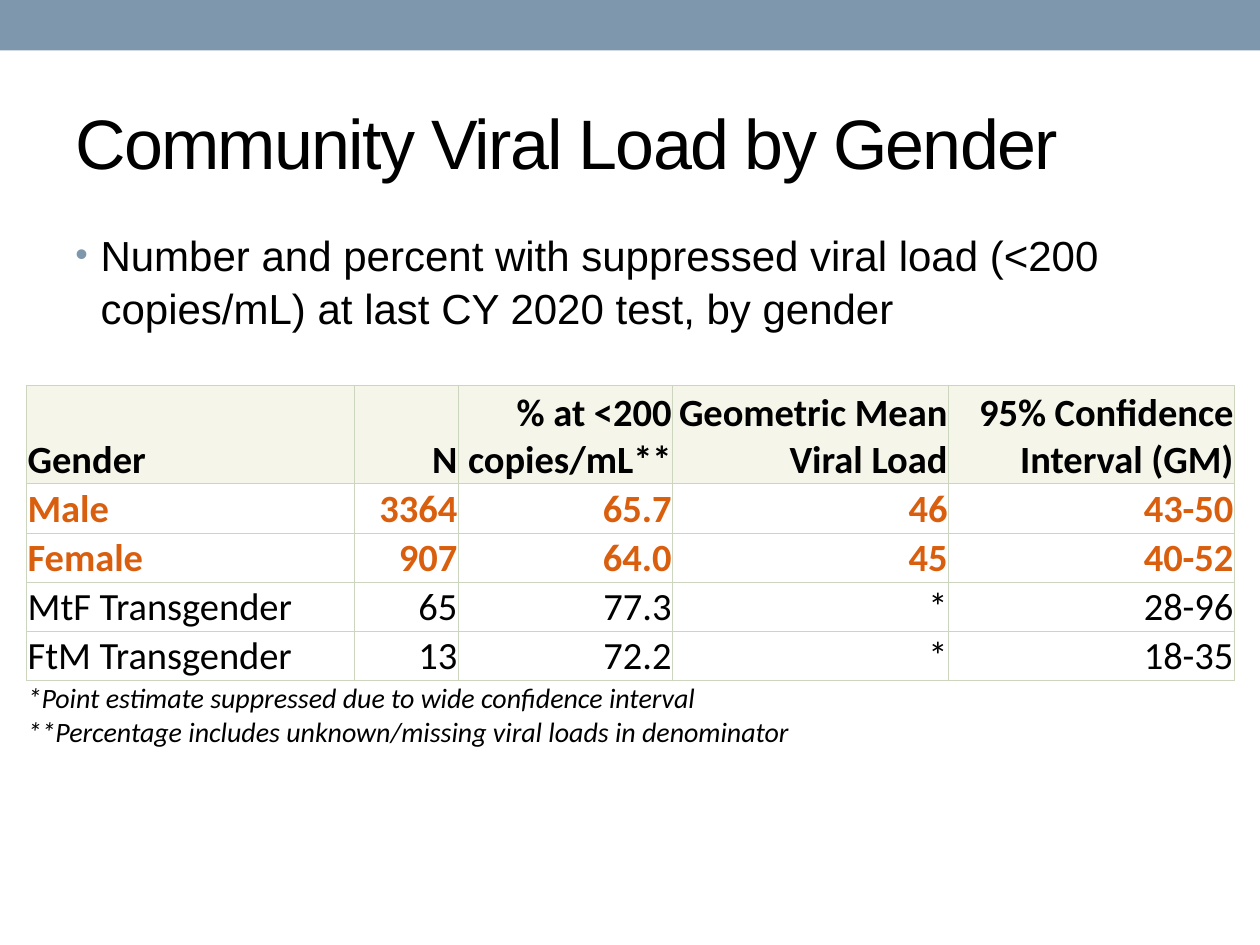
from lxml.etree import SubElement
from pptx import Presentation
from pptx.dml.color import RGBColor
from pptx.enum.shapes import MSO_SHAPE
from pptx.enum.text import MSO_ANCHOR, PP_ALIGN
from pptx.oxml.ns import qn
from pptx.util import Inches, Pt

COLORS = {
    "band": "7E97AD",
    "text": "000000",
    "highlight": "D95F0E",
    "header": "F6F5EA",
    "border": "CCD6BE",
}
COLUMNS = [2.6, 0.83, 1.7, 2.19, 2.27]
ROW_HEIGHT = 0.39
ROWS = [
    ["Gender", "N", "% at <200 copies/mL**", "Geometric Mean Viral Load",
     "95% Confidence Interval (GM)"],
    ["Male", "3364", "65.7", "46", "43-50"],
    ["Female", "907", "64.0", "45", "40-52"],
    ["MtF Transgender", "65", "77.3", "*", "28-96"],
    ["FtM Transgender", "13", "72.2", "*", "18-35"],
]
NOTES = [
    "*Point estimate suppressed due to wide confidence interval",
    "**Percentage includes unknown/missing viral loads in denominator",
]
CELL_FORMAT = {
    "vertical_anchor": MSO_ANCHOR.BOTTOM,
    "margin_left": Inches(0.01),
    "margin_top": Inches(0.01),
    "margin_right": Inches(0.01),
    "margin_bottom": 0,
}


def rgb(name):
    return RGBColor.from_string(COLORS[name])


def set_attrs(obj, **values):
    for name, value in values.items():
        setattr(obj, name, value)


def write(p, text, size, font, color="text", **style):
    r = p.add_run()
    r.text = text
    set_attrs(r.font, size=Pt(size), name=font, **style)
    r.font.color.rgb = rgb(color)
    return r


def add_band(s):
    sp = s.shapes.add_shape(MSO_SHAPE.RECTANGLE, 0, 0, Inches(10), Inches(0.4))
    sp.shadow.inherit = False
    sp.fill.solid()
    sp.fill.fore_color.rgb = rgb("band")
    sp.line.fill.background()


def add_text(s, box, text, size, anchor):
    sp = s.shapes.add_textbox(*map(Inches, box))
    tf = sp.text_frame
    set_attrs(tf, word_wrap=True, vertical_anchor=anchor)
    p = tf.paragraphs[0]
    return p, write(p, text, size, "Arial")


def add_bullet(p):
    set_attrs(p, space_before=Pt(3), space_after=Pt(3), line_spacing=1.05)
    pPr = p._p.get_or_add_pPr()
    pPr.set("marL", str(Inches(0.2)))
    pPr.set("indent", str(-Inches(0.2)))
    color = SubElement(pPr, qn("a:buClr"))
    SubElement(color, qn("a:srgbClr"), val=COLORS["band"])
    SubElement(pPr, qn("a:buSzPct"), val="85000")
    SubElement(pPr, qn("a:buFont"), typeface="Arial")
    SubElement(pPr, qn("a:buChar"), char="•")


def format_cell(cell, sides="LRTB", fill=None):
    set_attrs(cell, **CELL_FORMAT)
    tcPr = cell._tc.get_or_add_tcPr()
    for side in "LRTB":
        ln = SubElement(tcPr, qn(f"a:ln{side}"), w=str(Pt(0.5)))
        if side in sides:
            line = SubElement(ln, qn("a:solidFill"))
            SubElement(line, qn("a:srgbClr"), val=COLORS["border"])
        else:
            SubElement(ln, qn("a:noFill"))
    if fill:
        cell.fill.solid()
        cell.fill.fore_color.rgb = rgb(fill)
    else:
        cell.fill.background()


def add_gender_table(s):
    heights = [2 * ROW_HEIGHT] + [ROW_HEIGHT] * len(ROWS)
    frame = s.shapes.add_table(
        len(heights), len(COLUMNS), Inches(0.21), Inches(3.06),
        Inches(sum(COLUMNS)), Inches(sum(heights)))
    table = frame.table
    set_attrs(table, first_row=False, horz_banding=False)
    for column, width in zip(table.columns, COLUMNS):
        column.width = Inches(width)
    for row, height in zip(table.rows, heights):
        row.height = Inches(height)

    for i, values in enumerate(ROWS):
        for j, value in enumerate(values):
            cell = table.cell(i, j)
            format_cell(cell, fill="header" if i == 0 else None)
            p = cell.text_frame.paragraphs[0]
            p.alignment = PP_ALIGN.RIGHT if j else PP_ALIGN.LEFT
            color = "highlight" if i in (1, 2) else "text"
            write(p, value, 22, "Calibri", color, bold=i < 3)

    last = len(ROWS)
    for j in range(len(COLUMNS)):
        format_cell(table.cell(last, j), sides="T")
    notes = table.cell(last, 0)
    notes.merge(table.cell(last, len(COLUMNS) - 1))
    tf = notes.text_frame
    for k, note in enumerate(NOTES):
        p = tf.add_paragraph() if k else tf.paragraphs[0]
        write(p, note, 16, "Calibri", italic=True)


def main():
    prs = Presentation()
    set_attrs(prs, slide_width=Inches(10), slide_height=Inches(7.5))
    s = prs.slides.add_slide(prs.slide_layouts[6])
    add_band(s)
    p, r = add_text(s, (0.5, 0.58, 9, 1.08), "Community Viral Load by Gender",
                    40, MSO_ANCHOR.MIDDLE)
    r.font._element.set("spc", "-100")
    p, r = add_text(s, (0.5, 1.75, 9, 1.17),
                    "Number and percent with suppressed viral load (<200 copies/mL) "
                    "at last CY 2020 test, by gender", 24, MSO_ANCHOR.TOP)
    add_bullet(p)
    add_gender_table(s)
    prs.save("out.pptx")


if __name__ == "__main__":
    main()
